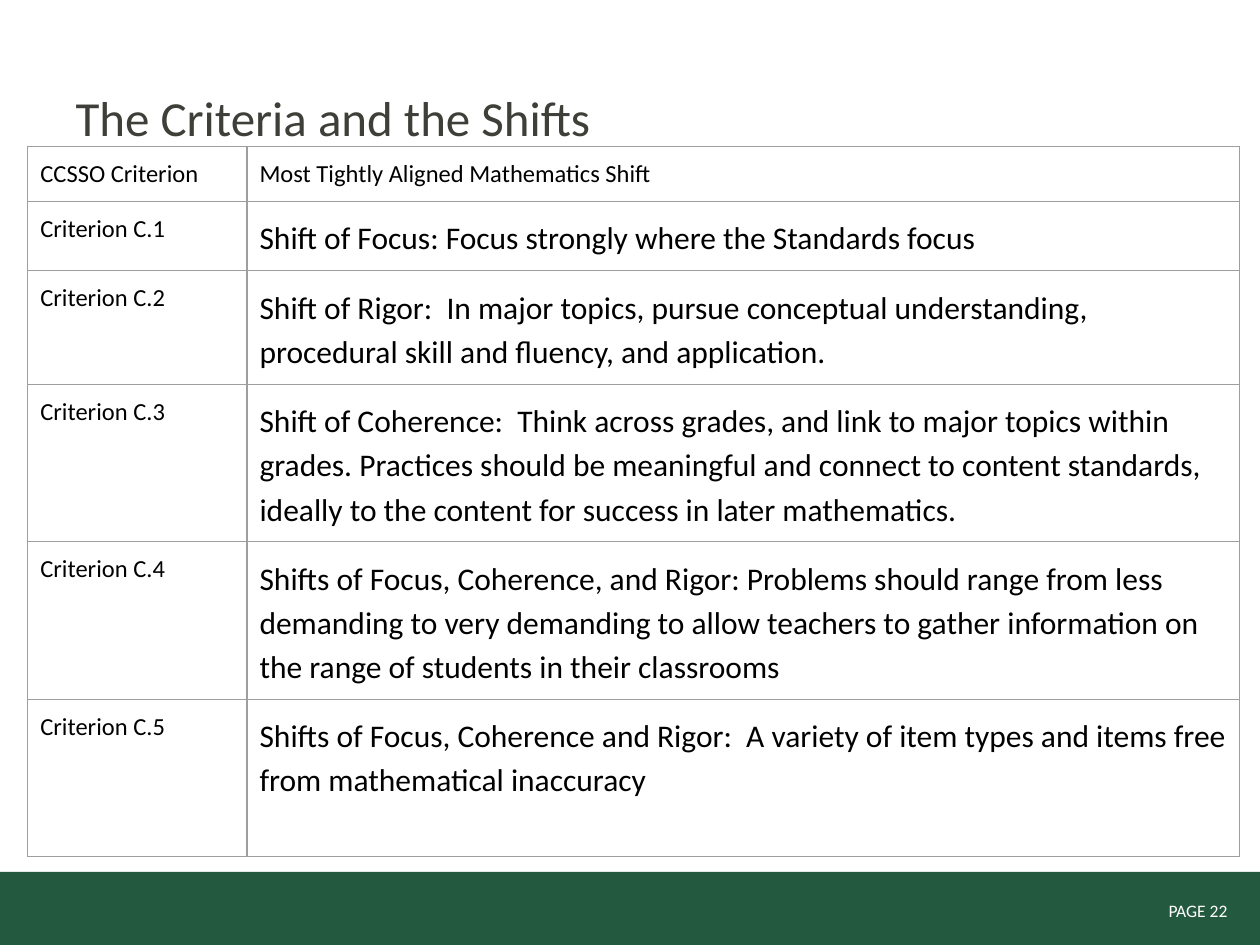
"""Build the slide that matches each CCSSO criterion with its mathematics shift."""
from lxml import etree
from pptx import Presentation
from pptx.dml.color import RGBColor
from pptx.enum.shapes import MSO_SHAPE
from pptx.enum.text import MSO_ANCHOR, MSO_AUTO_SIZE, PP_ALIGN
from pptx.oxml.ns import qn
from pptx.util import Inches, Pt

RECTANGLE = MSO_SHAPE.RECTANGLE
TOP, MIDDLE = MSO_ANCHOR.TOP, MSO_ANCHOR.MIDDLE
LEFT, RIGHT = PP_ALIGN.LEFT, PP_ALIGN.RIGHT
NO_AUTOFIT = MSO_AUTO_SIZE.NONE

COLORS = {"band": "23593E", "page": "FFFFFF", "title": "3F3F39",
          "body": "000000", "border": "9E9E9E"}
MARGINS = dict.fromkeys(
    ("margin_left", "margin_right", "margin_top", "margin_bottom"), Inches(0.1))
BORDERS = ("a:lnL", "a:lnR", "a:lnT", "a:lnB")
BORDER_WIDTH = Pt(0.75)

COLUMN_WIDTHS = (1.74, 7.88)
ROW_HEIGHTS = (0.44, 0.55, 0.9, 1.25, 1.25, 1.25)
HEADINGS = ("CCSSO Criterion", "Most Tightly Aligned Mathematics Shift")
SHIFTS = (
    "Shift of Focus: Focus strongly where the Standards focus",
    "Shift of Rigor:  In major topics, pursue conceptual understanding, "
    "procedural skill and fluency, and application.",
    "Shift of Coherence:  Think across grades, and link to major topics within "
    "grades. Practices should be meaningful and connect to content standards, "
    "ideally to the content for success in later mathematics.",
    "Shifts of Focus, Coherence, and Rigor: Problems should range from less "
    "demanding to very demanding to allow teachers to gather information on "
    "the range of students in their classrooms",
    "Shifts of Focus, Coherence and Rigor:  A variety of item types and items "
    "free from mathematical inaccuracy",
)


def apply(target, settings):
    for name, value in settings.items():
        setattr(target, name, value)


def write(frame, text, size, color, align=LEFT, spacing=1.0):
    frame.text = text
    paragraph = frame.paragraphs[0]
    apply(paragraph, {"alignment": align, "line_spacing": spacing})
    font = paragraph.runs[0].font
    apply(font, {"name": "Calibri", "size": Pt(size), "bold": False})
    font.color.rgb = RGBColor.from_string(COLORS[color])


deck = Presentation()
apply(deck, {"slide_width": Inches(10), "slide_height": Inches(7.5)})
width, height = deck.slide_width, deck.slide_height
slide = deck.slides.add_slide(deck.slide_layouts[5])
shapes = slide.shapes

title = shapes.title
apply(title, {"left": int(width * 0.05), "top": int(height * 0.04),
              "width": int(width * 0.9), "height": Inches(1.25)})
apply(title.text_frame, {**MARGINS, "vertical_anchor": MIDDLE,
                         "word_wrap": True, "auto_size": NO_AUTOFIT})
write(title.text_frame, "The Criteria and the Shifts", 28, "title")

band_top = Inches(6.92)
footer = shapes.add_shape(RECTANGLE, 0, band_top, width, height - band_top)
footer.shadow.inherit = False
footer.fill.solid()
footer.fill.fore_color.rgb = RGBColor.from_string(COLORS["band"])
footer.line.fill.background()

page_number = shapes.add_textbox(
    Inches(8.28), Inches(7.09), Inches(1.59), Inches(0.27))
apply(page_number.text_frame, {"word_wrap": True, "vertical_anchor": TOP})
write(page_number.text_frame, "PAGE 22 ", 10, "page", RIGHT)

criteria = shapes.add_table(
    len(ROW_HEIGHTS), len(COLUMN_WIDTHS), Inches(0.22), Inches(1.16),
    Inches(sum(COLUMN_WIDTHS)), Inches(sum(ROW_HEIGHTS))).table
apply(criteria, {"first_row": False, "horz_banding": False})
for column, column_width in zip(criteria.columns, COLUMN_WIDTHS):
    column.width = Inches(column_width)
for row, row_height in zip(criteria.rows, ROW_HEIGHTS):
    row.height = Inches(row_height)

entries = [HEADINGS] + [
    (f"Criterion C.{number}", shift) for number, shift in enumerate(SHIFTS, 1)]
for row_index, entry in enumerate(entries):
    for column_index, text in enumerate(entry):
        cell = criteria.cell(row_index, column_index)
        is_shift = row_index > 0 and column_index == 1
        apply(cell, {**MARGINS, "vertical_anchor": TOP})
        write(cell.text_frame, text, 18 if is_shift else 14, "body",
              spacing=1.15 if is_shift else 1.0)
        properties = cell._tc.get_or_add_tcPr()
        for side in BORDERS:
            border = etree.SubElement(properties, qn(side), w=str(BORDER_WIDTH))
            paint = etree.SubElement(border, qn("a:solidFill"))
            etree.SubElement(paint, qn("a:srgbClr"), val=COLORS["border"])
        cell.fill.background()

deck.save("out.pptx")
